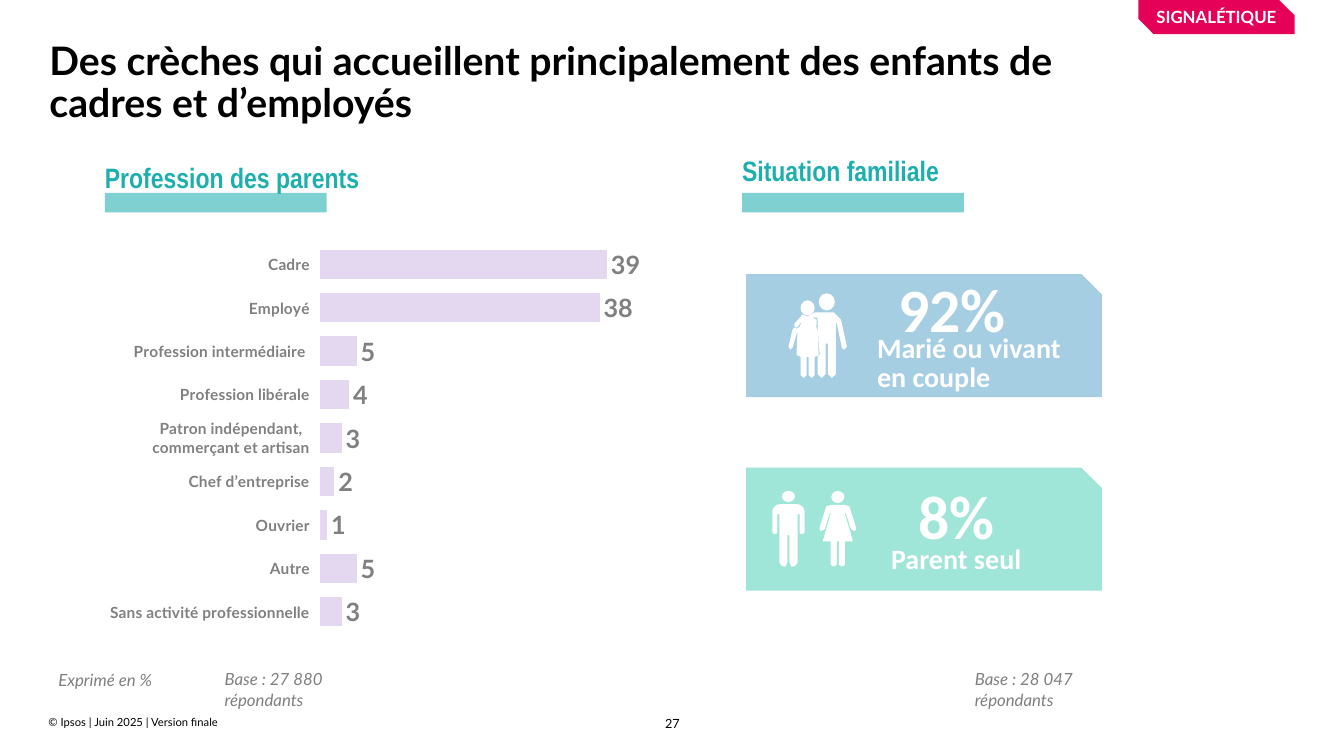
from lxml.etree import SubElement
from pptx import Presentation
from pptx.chart.data import CategoryChartData
from pptx.dml.color import RGBColor
from pptx.enum.chart import XL_CHART_TYPE as ChartType, XL_LABEL_POSITION as LabelPosition
from pptx.enum.chart import XL_TICK_MARK as TickMark
from pptx.enum.shapes import MSO_CONNECTOR as Connector, MSO_SHAPE as Shape
from pptx.enum.text import MSO_ANCHOR as Anchor, PP_ALIGN as Align
from pptx.oxml import parse_xml
from pptx.oxml.ns import nsdecls, qn
from pptx.util import Inches, Pt

COLORS = {
    "black": "000000", "white": "FFFFFF", "grey": "7F7F7F", "label": "808080",
    "teal": "1DAFAD", "lilac": "E3D8F0", "blue": "A5CEE3", "mint": "9FE5D8",
    "pink": "E50158",
}
TITLE = {"name": "Lato", "size": Pt(28), "bold": True}
HEADING = {"name": "Arial Narrow", "size": Pt(20), "bold": True}
NOTE = {"name": "Lato", "size": Pt(12), "italic": True}
TAG = {"name": "Lato", "size": Pt(12), "bold": True}
FOOTER = {"name": "Lato", "size": Pt(8)}
PAGE = {"name": "Lato", "size": Pt(9)}
SHARE = {"name": "Calibri", "size": Pt(44), "bold": True}
SITUATION = {"name": "Calibri", "size": Pt(20), "bold": True}
CATEGORY = {"name": "Lato", "size": Pt(11), "bold": True}
VALUE = {"name": "Lato", "size": Pt(18), "bold": True}

PROFESSIONS = {
    "Cadre": 39,
    "Employé": 38,
    "Profession intermédiaire ": 5,
    "Profession libérale": 4,
    "Patron indépendant, commerçant et artisan": 3,
    "Chef d’entreprise": 2,
    "Ouvrier": 1,
    "Autre": 5,
    "Sans activité professionnelle": 3,
}

# Outlines in hundredths of an inch; man and woman are right halves about their axis.
MAN = [(8, 0), (12, 1), (15, 4), (16, 7), (16, 28), (14, 30), (12, 30), (11, 28),
       (11, 10), (9, 10), (9, 58), (7, 61), (5, 62), (3, 62), (1, 58), (1, 31)]
WOMAN = [(7, 0), (11, 1), (12, 3), (18, 22), (18, 24), (17, 26), (15, 25), (13, 24),
         (8, 8), (7, 8), (15, 36), (7, 36), (7, 59), (5, 61), (4, 61), (2, 60),
         (1, 59), (1, 36)]
COUPLE = [(7, 14), (9, 15), (11, 13), (15, 8), (12, 14), (9, 16), (7, 15), (5, 17),
          (1, 34), (3, 37), (5, 35), (10, 18), (9, 42), (13, 44), (13, 62), (16, 65),
          (19, 62), (19, 44), (21, 44), (21, 62), (24, 65), (27, 62), (27, 44),
          (30, 43), (31, 42), (30, 19), (28, 12), (29, 13), (29, 7), (24, 5), (29, 5),
          (30, 6), (30, 16), (32, 42), (30, 44), (30, 61), (34, 65), (38, 61),
          (38, 31), (40, 31), (40, 61), (44, 65), (48, 61), (48, 10), (49, 11),
          (54, 35), (56, 37), (59, 34), (53, 7), (47, 1), (46, 0), (27, 0), (20, 4),
          (15, 2), (7, 11)]


def rgb(color):
    return RGBColor.from_string(COLORS[color])


def style(font, values, color):
    for attribute, value in values.items():
        setattr(font, attribute, value)
    font.color.rgb = rgb(color)


def write(frame, lines, values, color, margins=(0, 0, 0, 0), wrap=True,
          anchor=Anchor.TOP, **paragraph_format):
    """Fill a text frame; margins are left, top, right, bottom in inches."""
    for side, margin in zip(("left", "top", "right", "bottom"), margins):
        setattr(frame, f"margin_{side}", Inches(margin))
    frame.word_wrap = wrap
    frame.vertical_anchor = anchor
    for index, line in enumerate(lines):
        paragraph = frame.add_paragraph() if index else frame.paragraphs[0]
        paragraph.text = line
        for attribute, value in paragraph_format.items():
            setattr(paragraph, attribute, value)
        style(paragraph.runs[0].font, values, color)


def add_text(slide, box, lines, values, color, **layout):
    frame = slide.shapes.add_textbox(*map(Inches, box)).text_frame
    write(frame, lines, values, color, **layout)


def paint(shape, color):
    shape.shadow.inherit = False
    shape.fill.solid()
    shape.fill.fore_color.rgb = rgb(color)
    shape.line.fill.background()


def add_block(slide, kind, box, color):
    block = slide.shapes.add_shape(kind, *map(Inches, box))
    paint(block, color)
    return block


def add_outline(slide, left, top, points):
    builder = slide.shapes.build_freeform(*points[0], scale=Inches(0.01))
    builder.add_line_segments(points[1:], close=True)
    paint(builder.convert_to_shape(Inches(left), Inches(top)), "white")


def add_person(slide, axis, top, half, head_size):
    """Mirror half a body about its axis and set a head above it."""
    add_outline(slide, axis, top, half + [(-x, y) for x, y in reversed(half)])
    width, height, rise = head_size
    add_block(slide, Shape.OVAL, (axis - width / 2, top - rise, width, height), "white")


def add_heading(slide, left, top, width, title):
    underline_y = 2.01
    underline = slide.shapes.add_connector(
        Connector.STRAIGHT, *map(Inches, (left, underline_y, left + 2.2, underline_y)))
    underline.line.width = Pt(14)
    underline.line.color.rgb = rgb("teal")
    tint = underline.line._get_or_add_ln().find(".//" + qn("a:srgbClr"))
    SubElement(tint, qn("a:alpha"), val="57000")
    SubElement(underline._element.spPr, qn("a:effectLst"))
    add_text(slide, (left, top, width, 0.28), [title], HEADING, "teal")


def add_base(slide, left, count):
    add_text(slide, (left, 6.59, 1.99, 0.3), [f"Base : {count} répondants"], NOTE, "grey",
             margins=(0.1, 0.05, 0.8, 0.05))


def add_profession_chart(slide, box):
    data = CategoryChartData()
    data.categories = list(PROFESSIONS)
    data.add_series("Series 1", list(PROFESSIONS.values()))
    chart = slide.shapes.add_chart(
        ChartType.BAR_CLUSTERED, *map(Inches, box), data).chart
    chart.has_legend = chart.has_title = False
    style(chart.font, {"name": "Lato", "size": Pt(18)}, "black")

    jobs = chart.category_axis
    jobs.reverse_order = True
    jobs.major_tick_mark = TickMark.OUTSIDE
    jobs.format.line.fill.background()
    style(jobs.tick_labels.font, CATEGORY, "label")

    scale = chart.value_axis
    scale.minimum_scale, scale.maximum_scale = 0, 45
    scale.has_major_gridlines = False
    scale.visible = False

    bars = chart.plots[0]
    bars.vary_by_categories = False
    bars.gap_width, bars.overlap = 48, 44
    fill = bars.series[0].format.fill
    fill.solid()
    fill.fore_color.rgb = rgb("lilac")
    bars.has_data_labels = True
    labels = bars.data_labels
    labels.show_value = True
    labels.position = LabelPosition.OUTSIDE_END
    labels.number_format, labels.number_format_is_linked = "0;\\-0;", False
    style(labels.font, VALUE, "label")

    plot_area = chart._chartSpace.chart.plotArea
    for layout in plot_area.findall(qn("c:layout")):
        plot_area.remove(layout)
    settings = {"layoutTarget": "inner", "xMode": "edge", "yMode": "edge",
                "x": 0.39, "y": 0.04, "w": 0.58, "h": 0.93}
    entries = "".join(f'<c:{key} val="{value}"/>' for key, value in settings.items())
    plot_area.insert(0, parse_xml(
        f'<c:layout {nsdecls("c")}><c:manualLayout>{entries}</c:manualLayout></c:layout>'))


def add_situation_card(slide, left, top, color, share, share_box, lines, lines_box, **layout):
    """Draw a card; the two text boxes are relative to its corner."""
    add_block(slide, Shape.SNIP_1_RECTANGLE, (left, top, 3.53, 1.22), color)
    inset = (0.1, 0.05, 0.1, 0.05)
    for words, (x, y, w, h), font, extra in (
            ([share], share_box, SHARE, {"wrap": False}),
            (lines, lines_box, SITUATION, layout)):
        add_text(slide, (left + x, top + y, w, h), words, font, "white",
                 margins=inset, **extra)


def add_family_panel(slide, left):
    couple_top, single_top = 2.72, 4.64
    add_situation_card(slide, left, couple_top, "blue", "92%", (1.41, -0.08, 1.28, 0.84),
                       ["Marié ou vivant", "en couple"], (1.2, 0.57, 2.05, 0.66),
                       line_spacing=Pt(20))
    add_outline(slide, left + 0.41, couple_top + 0.38, COUPLE)
    for x, y, width, height in ((0.72, 0.19, 0.16, 0.17), (0.54, 0.26, 0.14, 0.15)):
        add_block(slide, Shape.OVAL, (left + x, couple_top + y, width, height), "white")

    add_situation_card(slide, left, single_top, "mint", "8%", (1.61, 0.05, 0.96, 0.84),
                       ["Parent seul"], (1.34, 0.68, 1.5, 0.44), wrap=False)
    add_person(slide, left + 0.42, single_top + 0.36, MAN, (0.13, 0.11, 0.13))
    add_person(slide, left + 0.91, single_top + 0.37, WOMAN, (0.13, 0.12, 0.14))


def add_frame(slide):
    """Place the footer, page number, title and section tag."""
    add_text(slide, (0.48, 7.1, 5.11, 0.13), ["© Ipsos | Juin 2025 | Version finale"],
             FOOTER, "black", anchor=Anchor.BOTTOM)
    add_text(slide, (6.4, 7.09, 0.54, 0.15), ["27"], PAGE, "black",
             alignment=Align.CENTER, line_spacing=1.1)
    add_text(slide, (0.49, 0.41, 10.69, 0.78),
             ["Des crèches qui accueillent principalement des enfants de cadres et d’employés"],
             TITLE, "black", line_spacing=0.9)
    tag = add_block(slide, Shape.SNIP_2_DIAG_RECTANGLE, (11.29, 0, 1.55, 0.34), "pink")
    tag.adjustments[0], tag.adjustments[1] = 0, 0.45
    write(tag.text_frame, ["SIGNALÉTIQUE"], TAG, "white", margins=(0, 0.05, 0, 0.05),
          anchor=Anchor.MIDDLE, alignment=Align.CENTER)


def main():
    deck = Presentation()
    deck.slide_width, deck.slide_height = Inches(13.33), Inches(7.5)
    slide = deck.slides.add_slide(deck.slide_layouts[6])
    add_frame(slide)
    add_heading(slide, 1.04, 1.59, 2.7, "Profession des parents")
    add_heading(slide, 7.36, 1.52, 3.15, "Situation familiale")
    add_profession_chart(slide, (0.96, 2.24, 5.67, 4.17))
    add_family_panel(slide, 7.4)
    add_text(slide, (0.56, 6.64, 0.97, 0.2), ["Exprimé en %"], NOTE, "grey",
             wrap=False, alignment=Align.CENTER)
    add_base(slide, 2.13, "27 880")
    add_base(slide, 9.57, "28 047")
    deck.save("out.pptx")


if __name__ == "__main__":
    main()
